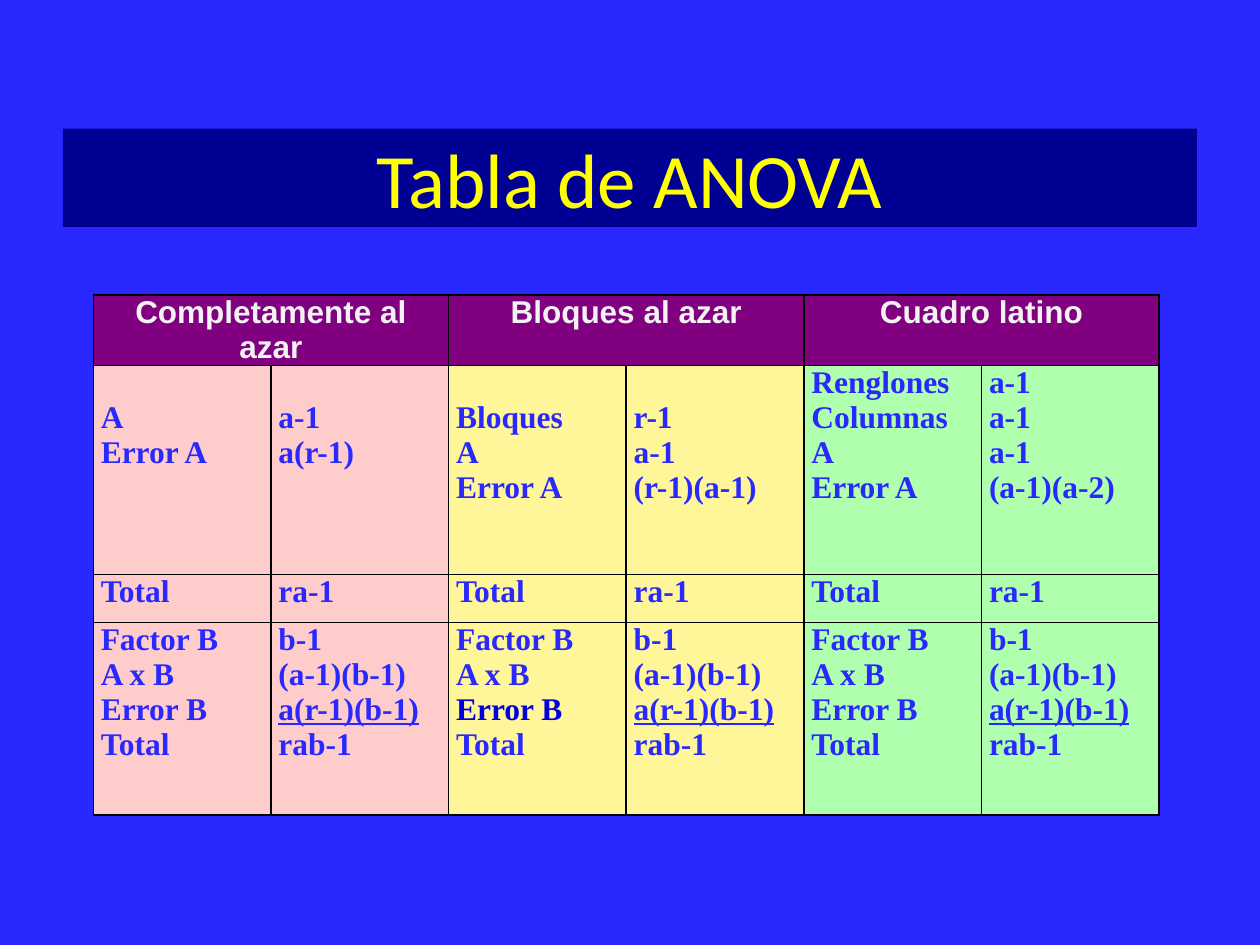
from lxml import etree
from pptx import Presentation
from pptx.dml.color import RGBColor
from pptx.enum.shapes import MSO_SHAPE
from pptx.enum.text import MSO_ANCHOR, PP_ALIGN
from pptx.oxml.ns import qn
from pptx.util import Inches, Pt

RECT = MSO_SHAPE.RECTANGLE
MIDDLE = MSO_ANCHOR.MIDDLE
CENTER = PP_ALIGN.CENTER

THEME = {
    "back": "2828FF", "banner": "000093", "title": "FFFF00",
    "head": "800080", "head_text": "F2F2F2", "text": "2828FF",
    "accent": "0000DD", "border": "000000",
    "title_font": "Calibri", "head_font": "Arial", "body_font": "Times New Roman",
    "title_size": 44, "table_size": 18,
}
COL_W = 1.41
ROW_H = [0.42, 1.66, 0.38, 1.53]
LINE_H = 0.28

# heading, column fill, lines skipped above, sources, degrees of freedom
DESIGNS = [
    ("Completamente al azar", "FFCCCC", 1, ["A", "Error A"], ["a-1", "a(r-1)"]),
    ("Bloques al azar", "FFF599", 1, ["Bloques", "A", "Error A"],
     ["r-1", "a-1", "(r-1)(a-1)"]),
    ("Cuadro latino", "AFFFAF", 0, ["Renglones", "Columnas", "A", "Error A"],
     ["a-1", "a-1", "a-1", "(a-1)(a-2)"]),
]
TOTALS = ["Total", "ra-1"]
SUBPLOT = [["Factor B", "A x B", "Error B", "Total"],
           ["b-1", "(a-1)(b-1)", "a(r-1)(b-1)", "rab-1"]]


def style(font, name, size, color, bold=False):
    font.name = name
    font.size = Pt(size)
    font.color.rgb = RGBColor.from_string(color)
    font.bold = bold


def fill_cell(cell, lines, fill, font, color, skip=0):
    """Write one paragraph per line, starting `skip` lines down, with thin borders."""
    cell.margin_left = cell.margin_right = Inches(0.06)
    cell.margin_top, cell.margin_bottom = Inches(skip * LINE_H), 0
    tf = cell.text_frame
    tf.text = "\n".join(lines)
    for p in tf.paragraphs:
        style(p.font, font, THEME["table_size"], color, bold=True)
    tcPr = cell._tc.get_or_add_tcPr()
    for side in ("a:lnL", "a:lnR", "a:lnT", "a:lnB"):
        ln = etree.SubElement(tcPr, qn(side), w=str(Pt(1)))
        solid = etree.SubElement(ln, qn("a:solidFill"))
        etree.SubElement(solid, qn("a:srgbClr"), val=THEME["border"])
    cell.fill.solid()
    cell.fill.fore_color.rgb = RGBColor.from_string(fill)


prs = Presentation()
prs.slide_width, prs.slide_height = Inches(10), Inches(7.5)
s = prs.slides.add_slide(prs.slide_layouts[6])
s.background.fill.solid()
s.background.fill.fore_color.rgb = RGBColor.from_string(THEME["back"])

banner = s.shapes.add_shape(RECT, Inches(0.5), Inches(1.02), Inches(9), Inches(0.78))
banner.shadow.inherit = False
banner.fill.solid()
banner.fill.fore_color.rgb = RGBColor.from_string(THEME["banner"])
banner.line.fill.background()
tf = banner.text_frame
tf.vertical_anchor = MIDDLE
tf.text = "Tabla de ANOVA"
p = tf.paragraphs[0]
p.alignment = CENTER
style(p.font, THEME["title_font"], THEME["title_size"], THEME["title"])

cols = 2 * len(DESIGNS)
table = s.shapes.add_table(len(ROW_H), cols, Inches(0.74), Inches(2.34),
                           Inches(cols * COL_W), Inches(sum(ROW_H))).table
table.first_row = table.horz_banding = False
for col in table.columns:
    col.width = Inches(COL_W)
for row, height in zip(table.rows, ROW_H):
    row.height = Inches(height)

for d, (heading, fill, skip, sources, freedom) in enumerate(DESIGNS):
    left = 2 * d
    head = table.cell(0, left)
    head.merge(table.cell(0, left + 1))
    fill_cell(head, [heading], THEME["head"], THEME["head_font"], THEME["head_text"])
    head.text_frame.paragraphs[0].alignment = CENTER

    for c, main in enumerate((sources, freedom)):
        body = [(main, skip), ([TOTALS[c]], 0), (SUBPLOT[c], 0)]
        for r, (lines, gap) in enumerate(body, start=1):
            fill_cell(table.cell(r, left + c), lines, fill,
                      THEME["body_font"], THEME["text"], gap)
        p = table.cell(2, left + c).text_frame.paragraphs[0]
        p.space_before = p.space_after = Pt(3)
    table.cell(3, left + 1).text_frame.paragraphs[2].runs[0].font.underline = True

error_b = table.cell(3, 2).text_frame.paragraphs[2]
error_b.font.color.rgb = RGBColor.from_string(THEME["accent"])

prs.save("out.pptx")
